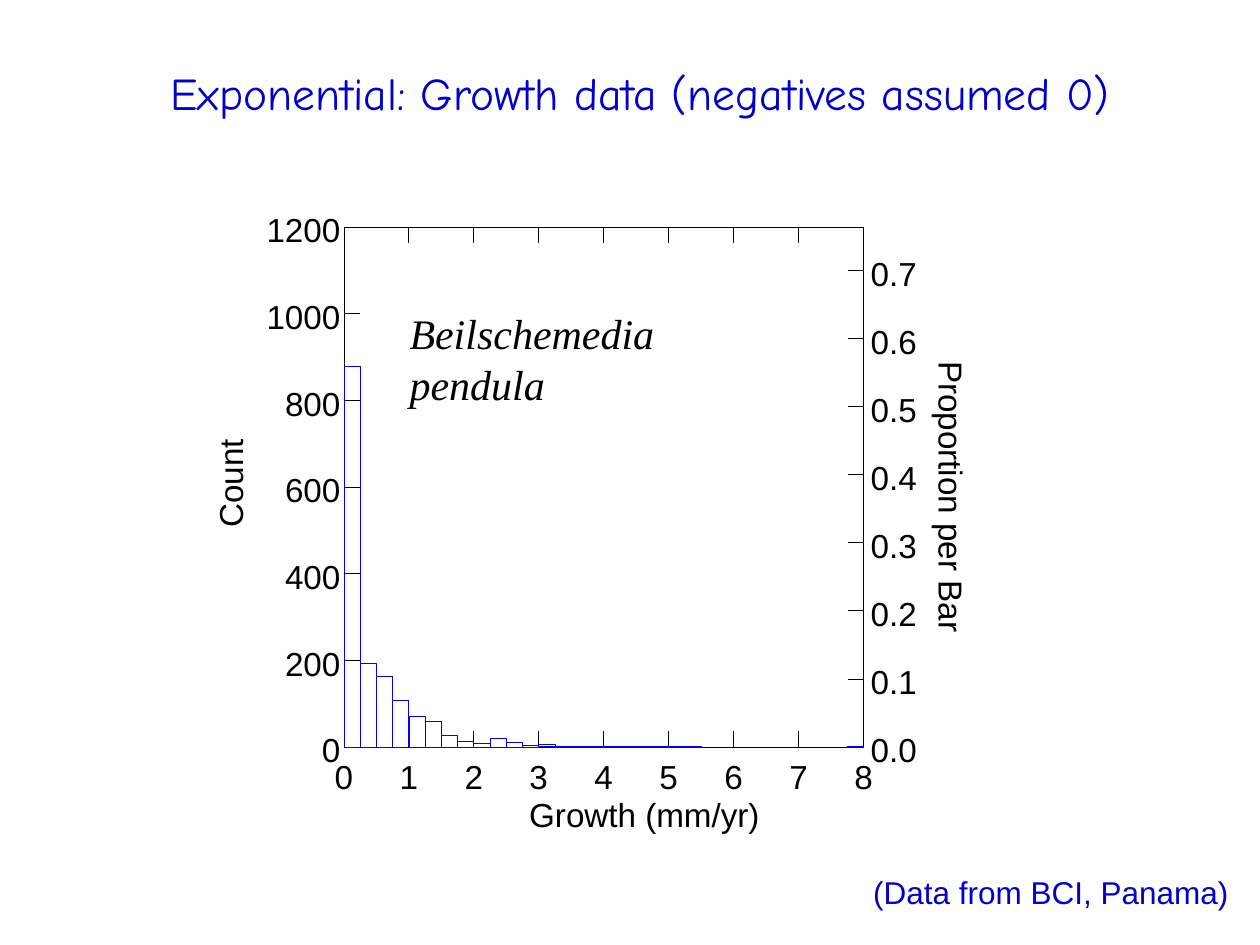
from lxml.etree import SubElement
from pptx import Presentation
from pptx.dml.color import RGBColor
from pptx.enum.shapes import MSO_CONNECTOR, MSO_SHAPE
from pptx.enum.text import MSO_ANCHOR, PP_ALIGN
from pptx.oxml.ns import qn
from pptx.util import Pt

BLACK, BLUE, BAR_BLUE = "000000", "0000CC", "0000F2"
LINE_WIDTH = 0.38
TICK = 9
LABEL_HEIGHT = 23
BIN_COUNTS = [878, 193, 164, 108, 71, 60, 27, 12, 9, 20, 11, 4, 6,
              1, 1, 2, 2, 1, 1, 2, 2, 1] + [0] * 9 + [1]
COUNT_MAX, GROWTH_MAX, PROPORTION_MAX = 1200, 8, 0.764


def color(hex_string):
    """Turn a hex string into a colour."""
    return RGBColor.from_string(hex_string)


def add_run(paragraph, text, size, font="Arial", fill=BLACK, italic=False):
    """Append one formatted run to a paragraph."""
    run = paragraph.add_run()
    run.text = text
    run.font.size = Pt(size)
    run.font.name = font
    run.font.italic = italic
    run.font.bold = False
    run.font.color.rgb = color(fill)


def add_label(shapes, box, text, align=PP_ALIGN.CENTER, size=19, rotation=0,
              wrap=False, **style):
    """Add a text box without insets and return it."""
    shape = shapes.add_textbox(*map(Pt, box))
    shape.rotation = rotation
    frame = shape.text_frame
    frame.word_wrap = wrap
    frame.margin_left = frame.margin_right = 0
    frame.margin_top = frame.margin_bottom = 0
    paragraph = frame.paragraphs[0]
    paragraph.alignment = align
    add_run(paragraph, text, size, **style)
    return shape


def add_line(shapes, *ends):
    """Draw a thin black line between two points."""
    connector = shapes.add_connector(MSO_CONNECTOR.STRAIGHT, *map(Pt, ends))
    connector.line.width = Pt(LINE_WIDTH)
    connector.line.color.rgb = color(BLACK)
    SubElement(connector._element.spPr, qn("a:effectLst"))


def add_title(slide, box, text):
    """Place and format the slide title."""
    title = slide.shapes.title
    title.left, title.top, title.width, title.height = map(Pt, box)
    frame = title.text_frame
    frame.vertical_anchor = MSO_ANCHOR.BOTTOM
    paragraph = frame.paragraphs[0]
    paragraph.alignment = PP_ALIGN.CENTER
    add_run(paragraph, text, 26, "Comic Neue", BLUE)


def add_growth_axis(shapes, box):
    """Draw the frame's top and bottom with the growth ticks and labels."""
    left, top, width, height = box
    right, bottom = left + width, top + height
    add_line(shapes, left, bottom, right, bottom)
    add_line(shapes, left, top, right, top)
    for growth in range(GROWTH_MAX + 1):
        x = left + width * growth / GROWTH_MAX
        add_line(shapes, x, bottom - TICK, x, bottom)
        add_line(shapes, x, top, x, top + TICK)
        add_label(shapes, (x - 5.5, bottom + 5.3, 11, LABEL_HEIGHT), str(growth))
    add_label(shapes, (left + width / 2 - 40, bottom + 27, 132, LABEL_HEIGHT),
              "Growth (mm/yr)", PP_ALIGN.LEFT).left = Pt(302.4)


def add_count_axis(shapes, box):
    """Draw the left side with the count ticks, labels and name."""
    left, top, width, height = box
    bottom = top + height
    add_line(shapes, left, top, left, bottom)
    for count in range(0, COUNT_MAX + 1, 200):
        y = bottom - height * count / COUNT_MAX
        add_line(shapes, left, y, left + TICK, y)
        add_label(shapes, (left - 45, y - 10, 43, LABEL_HEIGHT), str(count),
                  PP_ALIGN.RIGHT)
    add_label(shapes, (left - 90.5, top + 135, 51, LABEL_HEIGHT), "Count",
              rotation=270)


def add_proportion_axis(shapes, box):
    """Draw the right side with the proportion ticks, labels and name."""
    left, top, width, height = box
    right, bottom = left + width, top + height
    add_line(shapes, right, top, right, bottom)
    for tenths in range(8):
        y = bottom - height * tenths / 10 / PROPORTION_MAX
        add_line(shapes, right - TICK, y, right, y)
        add_label(shapes, (right + 4, y - 10, 27, LABEL_HEIGHT),
                  f"{tenths / 10:.1f}", PP_ALIGN.LEFT)
    add_label(shapes, (right - 27.5, top + 142.5, 155.5, LABEL_HEIGHT),
              "Proportion per Bar", rotation=90)


def add_bars(shapes, box):
    """Draw one outlined bar for each bin that is not empty."""
    left, top, width, height = box
    bar_width = width / len(BIN_COUNTS)
    for index, count in enumerate(BIN_COUNTS):
        if not count:
            continue
        bar_height = height * count / COUNT_MAX
        bar = shapes.add_shape(
            MSO_SHAPE.RECTANGLE, Pt(left + index * bar_width),
            Pt(top + height - bar_height), Pt(bar_width), Pt(bar_height))
        bar.shadow.inherit = False
        bar.fill.background()
        bar.line.width = Pt(LINE_WIDTH)
        bar.line.color.rgb = color(BAR_BLUE)


def add_histogram(slide, box):
    """Build the grouped histogram around its plot area."""
    shapes = slide.shapes.add_group_shape().shapes
    left, top = box[:2]
    for add_part in (add_growth_axis, add_count_axis, add_proportion_axis, add_bars):
        add_part(shapes, box)
    add_label(shapes, (left + 37.5, top + 46, 165, 56), "Beilschemedia pendula",
              PP_ALIGN.LEFT, 24, wrap=True, font="Times New Roman", italic=True)


def main():
    """Build and save the slide."""
    presentation = Presentation()
    presentation.slide_width, presentation.slide_height = Pt(720), Pt(540)
    slide = presentation.slides.add_slide(presentation.slide_layouts[5])
    add_title(slide, (24, 0, 684, 72),
              "Exponential: Growth data (negatives assumed 0)")
    add_histogram(slide, (196.5, 129.8, 297, 297))
    add_label(slide.shapes, (499, 499, 208, 22), "(Data from BCI, Panama)",
              PP_ALIGN.LEFT, 18, fill=BLUE)
    presentation.save("out.pptx")


if __name__ == "__main__":
    main()
